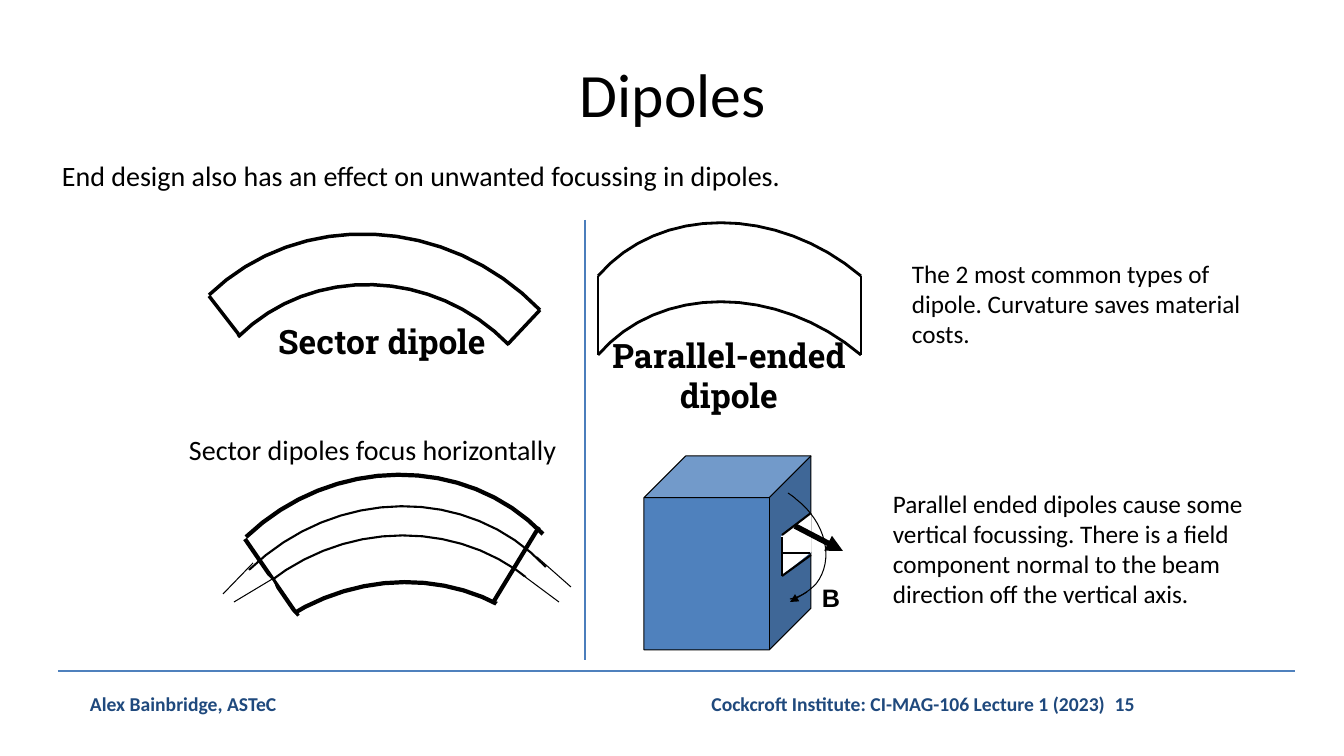
"""Builds the slide on sector and parallel-ended dipoles."""
from dataclasses import dataclass

from lxml.etree import SubElement
from pptx import Presentation
from pptx.dml.color import RGBColor as RGB
from pptx.enum.shapes import MSO_CONNECTOR as Link, MSO_SHAPE as Kind
from pptx.enum.text import MSO_ANCHOR as Anchor, PP_ALIGN as Align
from pptx.oxml.ns import qn
from pptx.util import Pt

SCALE = 9071.43
STEPS = 16


@dataclass(frozen=True)
class Theme:
    black: str = "000000"
    white: str = "FFFFFF"
    blue: str = "4F81BD"
    rule: str = "4B7EBC"
    navy: str = "1F497D"
    sans: str = "Calibri"
    slab: str = "Roboto Slab"
    mark: str = "Arial"
    title: int = 44
    label: int = 24
    lead: int = 20
    note: int = 18
    foot: int = 14


LOOK = Theme()


def px(*nums):
    return [round(n * SCALE) for n in nums]


def pen(line, width, color=LOOK.black):
    line.color.rgb = RGB.from_string(color)
    line.width = Pt(width)


def text(slide, box, words, size, font=LOOK.sans, color=LOOK.black,
         bold=False, align=Align.LEFT, anchor=Anchor.TOP):
    frame = slide.shapes.add_textbox(*px(*box)).text_frame
    frame.word_wrap = True
    frame.vertical_anchor = anchor
    para = frame.paragraphs[0]
    para.alignment = align
    run = para.add_run()
    run.text = words
    run.font.name = font
    run.font.size = Pt(size)
    run.font.bold = bold
    run.font.color.rgb = RGB.from_string(color)


def line(slide, ends, width, color=LOOK.black, arrow=False):
    link = slide.shapes.add_connector(Link.STRAIGHT, *px(*ends))
    pen(link.line, width, color)
    if arrow:
        SubElement(link.line._get_or_add_ln(), qn("a:tailEnd"), type="triangle")
    SubElement(link._element.spPr, qn("a:effectLst"))


def lines(slide, width, *group):
    for ends in group:
        line(slide, ends, width)


def shape(slide, kind, box, fill, edge, adjust=None, turn=0):
    item = slide.shapes.add_shape(kind, *px(*box))
    item.shadow.inherit = False
    item.fill.solid()
    item.fill.fore_color.rgb = RGB.from_string(fill)
    pen(item.line, 0.75, edge)
    item.rotation = turn
    if adjust is not None:
        item.adjustments[0] = adjust


def mask(slide, *boxes):
    for box in boxes:
        shape(slide, Kind.OVAL, box, LOOK.white, LOOK.white)


def bend(knots, t):
    """Return the point at t on a cubic curve."""
    s = 1 - t
    parts = (s ** 3, 3 * s * s * t, 3 * s * t * t, t ** 3)
    return px(*(sum(w * k[axis] for w, k in zip(parts, knots)) for axis in (0, 1)))


def curve(slide, width, *knots):
    spots = [bend(knots[i:i + 4], step / STEPS)
             for i in range(0, len(knots) - 1, 3) for step in range(1, STEPS + 1)]
    path = slide.shapes.build_freeform(*px(*knots[0]), scale=1.0)
    path.add_line_segments(spots, close=False)
    item = path.convert_to_shape()
    item.shadow.inherit = False
    item.fill.background()
    pen(item.line, width)


def frame(slide):
    line(slide, (58, 671, 1295, 671), 2, LOOK.blue)
    foot = dict(size=LOOK.foot, color=LOOK.navy, bold=True)
    text(slide, (80, 687, 518, 34), "Alex Bainbridge, ASTeC", **foot)
    text(slide, (551, 687, 744, 34),
         "Cockcroft Institute: CI-MAG-106 Lecture 1 (2023)\t15",
         align=Align.CENTER, **foot)
    text(slide, (68, 30, 1210, 126), "Dipoles", LOOK.title,
         align=Align.CENTER, anchor=Anchor.MIDDLE)
    line(slide, (585, 220, 585, 660), 2, LOOK.rule)


def sector(slide):
    curve(slide, 2.5, (238, 337), (312, 264), (434, 268), (509, 345))
    curve(slide, 2.5, (209, 295), (299, 208), (448, 215), (540, 310))
    lines(slide, 2.5, (209, 296, 240, 336), (540, 310, 508, 344))


def ended(slide):
    for drop in (0, 79):
        curve(slide, 2, (861, 276 + drop), (777, 205 + drop),
              (659, 205 + drop), (598, 276 + drop))
    lines(slide, 2, *((x, 276, x, 355) for x in (598, 861)))


def focus(slide):
    curve(slide, 3, (246, 537), (332, 455), (466, 454), (543, 534))
    curve(slide, 3, (252, 645), (339, 562), (472, 561), (549, 643))
    lines(slide, 3, (245, 539, 298, 616), (539, 527, 494, 601))
    mask(slide, (230, 603, 73, 64), (490, 590, 69, 71))
    curve(slide, 1.5, (249, 570), (336, 486), (469, 485), (546, 567))
    curve(slide, 1.5, (252, 597), (337, 515), (470, 515), (547, 596))
    mask(slide, (514, 575, 42, 41), (227, 571, 49, 44))
    lines(slide, 0.75, (537, 557, 571, 587), (524, 576, 559, 602),
          (274, 578, 234, 602), (253, 563, 223, 594))


def magnet(slide):
    shape(slide, Kind.CUBE, (644, 456, 167, 194), LOOK.blue, LOOK.black, 0.25)
    shape(slide, Kind.PARALLELOGRAM, (766, 529, 61, 30),
          LOOK.white, LOOK.white, 0.79, 321.3)
    lines(slide, 1.5, (811, 513, 782, 535), (811, 555, 782, 576),
          (810, 553, 782, 553))
    line(slide, (782, 537, 782, 576), 2)
    curve(slide, 0.75, (788, 493), (791, 495), (794, 497), (796, 499),
          (826, 522), (835, 560), (816, 584), (809, 591), (801, 597), (790, 599))
    line(slide, (795, 526, 843, 551), 4, arrow=True)
    line(slide, (807, 592, 790, 602), 0.75, arrow=True)
    text(slide, (812, 577, 32, 40), "B", LOOK.note, LOOK.mark, bold=True)


def notes(slide):
    text(slide, (52, 154, 1224, 44),
         "End design also has an effect on unwanted focussing in dipoles.", LOOK.lead)
    text(slide, (179, 428, 400, 44), "Sector dipoles focus horizontally", LOOK.lead)
    for box, words in (((240, 316, 284, 51), "Sector dipole"),
                       ((562, 330, 334, 92), "Parallel-ended dipole")):
        text(slide, box, words, LOOK.label, LOOK.slab, bold=True, align=Align.CENTER)
    text(slide, (902, 253, 370, 102),
         "The 2 most common types of dipole. Curvature saves material costs.", LOOK.note)
    text(slide, (883, 483, 394, 132),
         "Parallel ended dipoles cause some vertical focussing. There is a field "
         "component normal to the beam direction off the vertical axis.", LOOK.note)


def main():
    deck = Presentation()
    deck.slide_width, deck.slide_height = px(1344, 756)
    slide = deck.slides.add_slide(deck.slide_layouts[6])
    for part in (frame, sector, ended, focus, magnet, notes):
        part(slide)
    deck.save("out.pptx")


if __name__ == "__main__":
    main()
